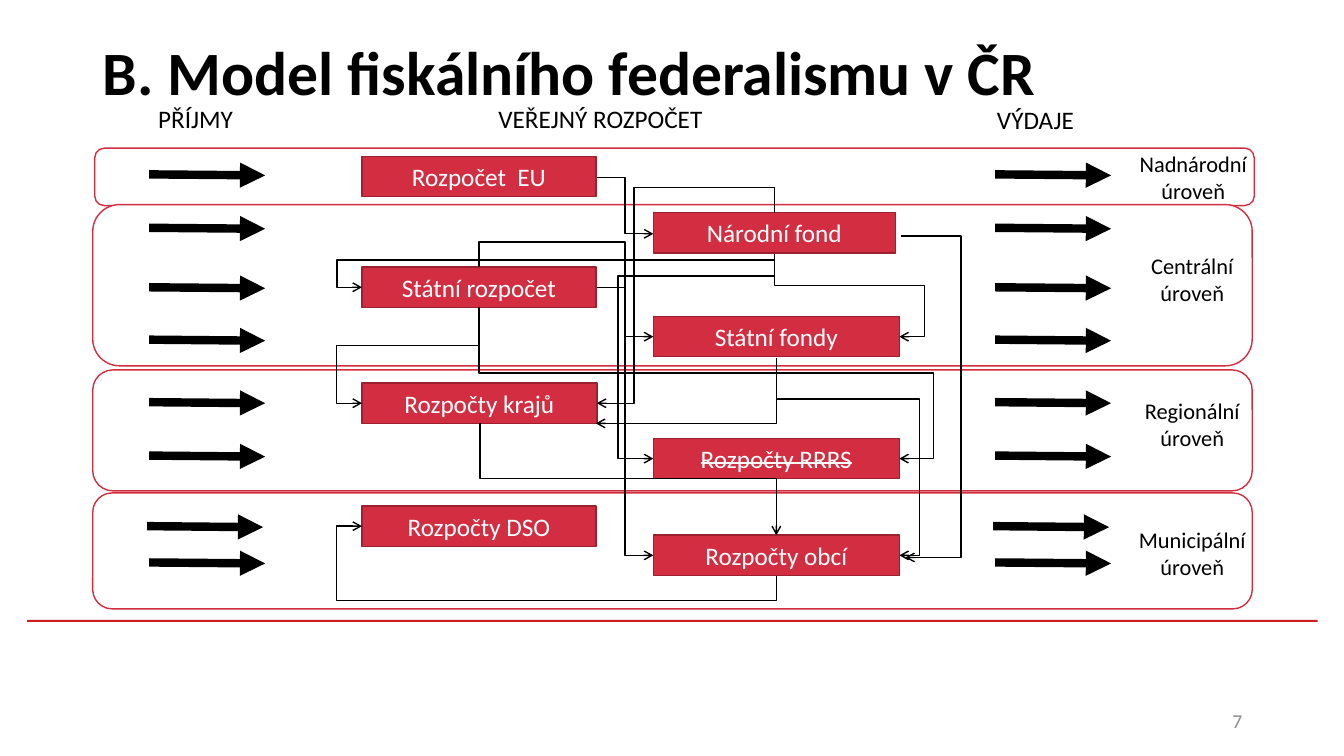
from lxml.etree import SubElement
from pptx import Presentation
from pptx.dml.color import RGBColor
from pptx.enum.shapes import MSO_CONNECTOR, MSO_SHAPE
from pptx.enum.text import MSO_ANCHOR, PP_ALIGN
from pptx.oxml.ns import qn
from pptx.util import Emu, Pt

SCALE = 9144
RED = "D22D40"
EDGE = "9B212F"
BLACK = "000000"
WHITE = "FFFFFF"

BANDS = [
    (94, 147, 57, "Nadnárodní úroveň", 1101, 144),
    (92, 203, 160, "Centrální úroveň", 1100, 245),
    (92, 367, 120, "Regionální úroveň", 1100, 389),
    (92, 489, 115, "Municipální úroveň", 1100, 517),
]
HEADS = [
    ("PŘÍJMY", 119, 98, 150),
    ("VEŘEJNÝ ROZPOČET", 446, 98, 299),
    ("VÝDAJE", 952, 99, 150),
]
BUDGETS = [
    ("Rozpočet  EU", 359, 155, 232),
    ("Národní fond", 648, 211, 240),
    ("Státní rozpočet", 359, 265, 232),
    ("Rozpočty krajů", 359, 380, 233),
    ("Rozpočty obcí", 648, 531, 244),
    ("Rozpočty RRRS", 648, 435, 244),
    ("Státní fondy", 648, 314, 244),
    ("Rozpočty DSO", 359, 502, 232),
]
STRUCK = "Rozpočty RRRS"
DOWN = [
    (768, 211, 592, 400, 186, 629),
    (768, 252, 648, 455, 274, 613),
    (475, 305, 892, 455, 370, 926),
    (475, 265, 648, 551, 240, 620),
    (475, 305, 359, 400, 343, 334),
    (770, 355, 892, 551, 396, 912),
    (476, 420, 770, 531, 475),
    (768, 252, 359, 285, 258, 334),
    (770, 355, 591, 420),
    (770, 571, 359, 522, 596, 334),
    (768, 252, 892, 334, 283, 917),
]
ACROSS = [
    (894, 234, 898, 553, 953),
    (592, 176, 648, 232, 620),
    (592, 285, 648, 334, 620),
]
FLOWS = [(0, 173), (0, 226), (0, 285), (0, 337),
         (0, 399), (0, 452), (-2, 522), (0, 558)]


def px(n):
    return Emu(round(n * SCALE))


def tint(code):
    return RGBColor.from_string(code)


def write(shape, text, size, color=WHITE, align=PP_ALIGN.CENTER,
          anchor=MSO_ANCHOR.TOP, bold=False, struck=False):
    frame = shape.text_frame
    frame.word_wrap = True
    frame.vertical_anchor = anchor
    para = frame.paragraphs[0]
    para.alignment = align
    run = para.add_run()
    run.text = text
    run.font.name = "Calibri"
    run.font.size = Pt(size)
    run.font.bold = bold
    run.font.color.rgb = tint(color)
    if struck:
        run.font._element.set("strike", "sngStrike")
    return para


def label(slide, text, x, y, w, h, size, color=BLACK, **style):
    box = slide.shapes.add_textbox(px(x), px(y), px(w), px(h))
    return write(box, text, size, color, **style)


def block(slide, kind, x, y, w, h, fill, edge=None):
    shape = slide.shapes.add_shape(kind, px(x), px(y), px(w), px(h))
    shape.shadow.inherit = False
    shape.fill.solid()
    shape.fill.fore_color.rgb = tint(fill)
    if edge:
        shape.line.color.rgb = tint(edge)
        shape.line.width = Pt(1)
    else:
        shape.line.fill.background()
    return shape


def link(slide, kind, x1, y1, x2, y2, width, tip):
    line = slide.shapes.add_connector(kind, px(x1), px(y1), px(x2), px(y2))
    line.line.color.rgb = tint(BLACK)
    line.line.width = Pt(width)
    props = line._element.spPr
    SubElement(props.find(qn("a:ln")), qn("a:tailEnd"), type=tip)
    SubElement(props, qn("a:effectLst"))
    return props


def wire(slide, down, x1, y1, x2, y2, *bends):
    dx, dy = x2 - x1, y2 - y1
    w, h = (abs(dy), abs(dx)) if down else (abs(dx), abs(dy))
    left, top = (x1 + x2 - w) / 2, (y1 + y2 - h) / 2
    props = link(slide, MSO_CONNECTOR.ELBOW, left, top, left + w, top + h, 1, "arrow")
    if down:
        turn = 90 if dx < 0 else 270
        props.xfrm.set("rot", str(turn * 60000))
        if (dy < 0) == (turn == 90):
            props.xfrm.set("flipH", "1")
    shape = props.find(qn("a:prstGeom"))
    shape.set("prst", f"bentConnector{len(bends) + 2}")
    guides = shape.find(qn("a:avLst"))
    if guides is None:
        guides = SubElement(shape, qn("a:avLst"))
    axes = [(x1, dx), (y1, dy)]
    if down:
        axes.reverse()
    for i, (bend, (start, span)) in enumerate(zip(bends, axes), 1):
        ratio = round((bend - start) / span * 100000)
        SubElement(guides, qn("a:gd"), name=f"adj{i}", fmla=f"val {ratio}")


def main():
    deck = Presentation()
    deck.slide_width, deck.slide_height = px(1333), px(750)
    slide = deck.slides.add_slide(deck.slide_layouts[6])

    block(slide, MSO_SHAPE.RECTANGLE, 27, 615, 1280, 2, "CD1F21")
    title = label(slide, "B. Model fiskálního federalismu v ČR", 92, 2, 1150, 145, 44,
                  align=PP_ALIGN.LEFT, anchor=MSO_ANCHOR.MIDDLE, bold=True)
    title.line_spacing = 0.9
    label(slide, "7", 942, 695, 300, 40, 14, "8C8C8C",
          align=PP_ALIGN.RIGHT, anchor=MSO_ANCHOR.MIDDLE)

    for x, y, h, *_ in BANDS:
        block(slide, MSO_SHAPE.ROUNDED_RECTANGLE, x, y, 1150, h, WHITE, RED)
    for text, x, y, w in BUDGETS:
        box = block(slide, MSO_SHAPE.RECTANGLE, x, y, w, 40, RED, EDGE)
        write(box, text, 18, struck=text == STRUCK)
    for path in DOWN:
        wire(slide, True, *path)
    for path in ACROSS:
        wire(slide, False, *path)
    for *_, text, x, y in BANDS:
        label(slide, text, x, y, 165, 64, 16)
    for text, x, y, w in HEADS:
        label(slide, text, x, y, w, 40, 18)
    for x in (148, 987):
        for shift, y in FLOWS:
            link(slide, MSO_CONNECTOR.STRAIGHT, x + shift, y,
                 x + shift + 115, y + 1, 6, "triangle")

    deck.save("out.pptx")


if __name__ == "__main__":
    main()
